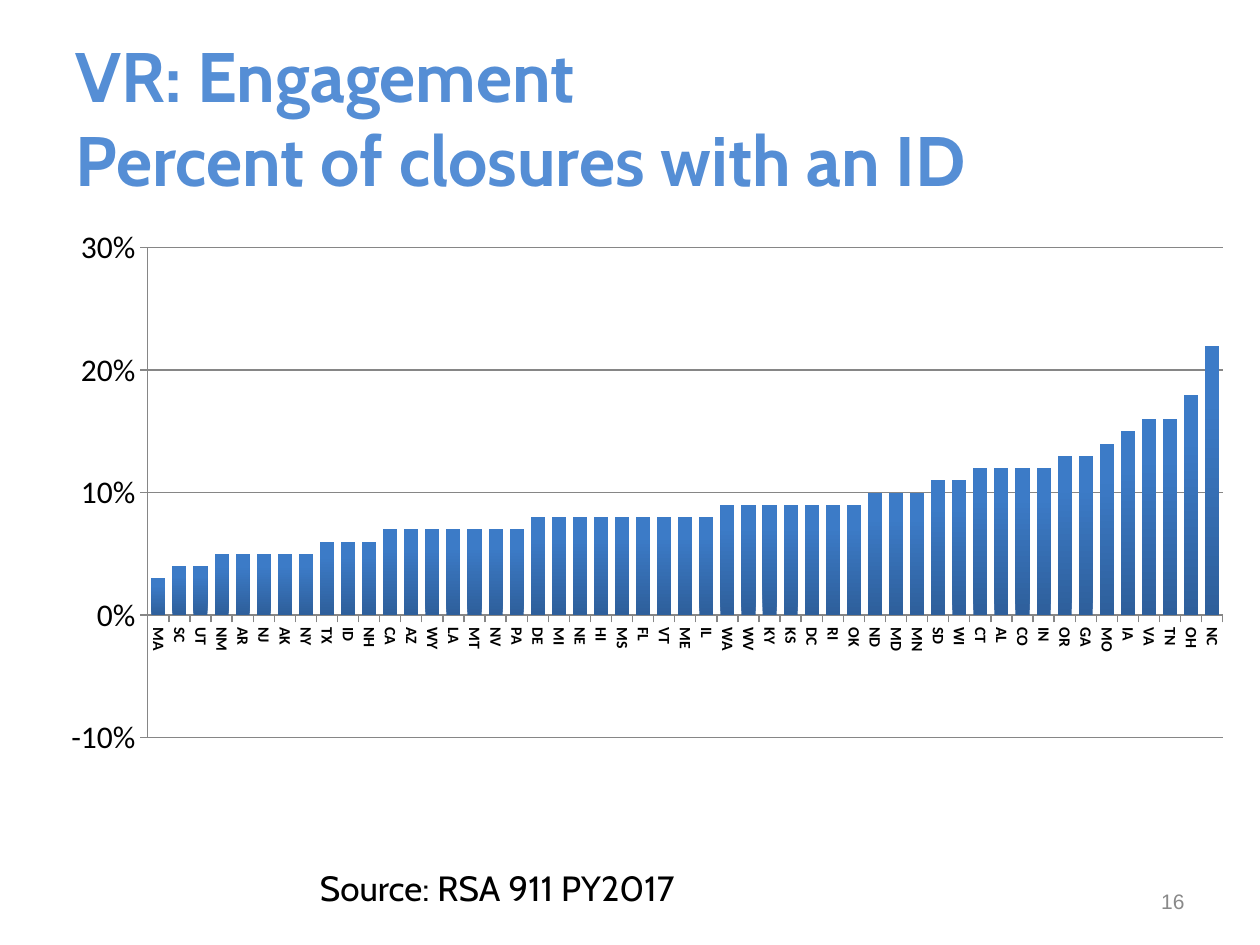
import pptx
import pptx.chart.data
import pptx.dml.color
import pptx.enum.chart
import pptx.enum.text
import pptx.oxml
import pptx.oxml.ns
import pptx.util

Inches = pptx.util.Inches
Pt = pptx.util.Pt
RGBColor = pptx.dml.color.RGBColor
ALIGN = pptx.enum.text.PP_ALIGN
ANCHOR = pptx.enum.text.MSO_ANCHOR

BLACK = RGBColor(0x00, 0x00, 0x00)
GRAY = RGBColor(0x89, 0x89, 0x89)
LINE_GRAY = RGBColor(0x86, 0x86, 0x86)
TITLE_BLUE = RGBColor(0x55, 0x8E, 0xD5)
BAR_DARK = RGBColor(0x2E, 0x5F, 0x9B)
BAR_LIGHT = RGBColor(0x3C, 0x7B, 0xC7)

STATES = (
    "MA SC UT NM AR NJ AK NY TX ID NH CA AZ WY LA MT NV PA DE MI NE HI MS FL VT ME "
    "IL WA WV KY KS DC RI OK ND MD MN SD WI CT AL CO IN OR GA MO IA VA TN OH NC"
).split()
SHARES = [
    0.03, 0.04, 0.04, 0.05, 0.05, 0.05, 0.05, 0.05, 0.06, 0.06, 0.06,
    0.07, 0.07, 0.07, 0.07, 0.07, 0.07, 0.07, 0.08, 0.08, 0.08, 0.08,
    0.08, 0.08, 0.08, 0.08, 0.08, 0.09, 0.09, 0.09, 0.09, 0.09, 0.09,
    0.09, 0.1, 0.1, 0.1, 0.11, 0.11, 0.12, 0.12, 0.12, 0.12, 0.13,
    0.13, 0.14, 0.15, 0.16, 0.16, 0.18, 0.22,
]


class Deck:
    heading_font = "Cabin"
    chart_font = "Calibri"

    def __init__(self):
        self.prs = pptx.Presentation()
        self.prs.slide_width = Inches(10)
        self.prs.slide_height = Inches(7.5)
        self.s = self.prs.slides.add_slide(self.prs.slide_layouts[5])

    def style(self, font, name, size, color, bold=False):
        font.name = name
        font.size = Pt(size)
        font.bold = bold
        font.color.rgb = color

    def title(self, text, x, y, w, h):
        sp = self.s.shapes.title
        sp.left, sp.top, sp.width, sp.height = map(Inches, (x, y, w, h))
        tf = sp.text_frame
        tf.text = text
        tf.word_wrap = True
        tf.auto_size = pptx.enum.text.MSO_AUTO_SIZE.NONE
        tf.vertical_anchor = ANCHOR.MIDDLE
        p = tf.paragraphs[0]
        p.alignment = ALIGN.LEFT
        self.style(p.font, self.heading_font, 40, TITLE_BLUE, True)

    def text(self, text, x, y, w, h, name, size, color, align=ALIGN.LEFT,
             anchor=ANCHOR.TOP, spacing=None):
        tf = self.s.shapes.add_textbox(*map(Inches, (x, y, w, h))).text_frame
        tf.word_wrap = True
        tf.vertical_anchor = anchor
        p = tf.paragraphs[0]
        p.text = text
        p.alignment = align
        p.line_spacing = spacing
        self.style(p.font, name, size, color)

    def column_chart(self, cats, vals, x, y, w, h, plot_box):
        data = pptx.chart.data.CategoryChartData(number_format="0%")
        data.categories = cats
        data.add_series("Series 1", vals)
        kind = pptx.enum.chart.XL_CHART_TYPE.COLUMN_STACKED
        chart = self.s.shapes.add_chart(kind, *map(Inches, (x, y, w, h)), data).chart
        chart.has_legend = False
        chart.has_title = False
        self.style(chart.font, self.chart_font, 18, BLACK)

        plot = chart.plots[0]
        plot.gap_width = 50
        plot.overlap = 100
        plot.vary_by_categories = False
        fill = plot.series[0].format.fill
        fill.gradient()
        fill.gradient_angle = 90
        for stop, color, position in zip(fill.gradient_stops, (BAR_DARK, BAR_LIGHT), (0, 0.8)):
            stop.color.rgb = color
            stop.position = position

        value, category = chart.value_axis, chart.category_axis
        value.minimum_scale, value.maximum_scale, value.major_unit = -0.1, 0.3, 0.1
        value.has_major_gridlines = True
        value.tick_labels.number_format = "0%"
        value.tick_labels.number_format_is_linked = False
        self.style(value.tick_labels.font, self.chart_font, 18, BLACK)
        self.style(category.tick_labels.font, self.chart_font, 9, BLACK, True)
        body = category._element.txPr.find(pptx.oxml.ns.qn("a:bodyPr"))
        body.set("rot", "5400000")
        body.set("vert", "horz")
        for axis in (value, category):
            axis.major_tick_mark = pptx.enum.chart.XL_TICK_MARK.OUTSIDE
        for part in (value, category, value.major_gridlines):
            part.format.line.color.rgb = LINE_GRAY
            part.format.line.width = Pt(0.75)
        self.place_plot(chart, plot_box)

    def place_plot(self, chart, box):
        area = chart._chartSpace.chart.plotArea
        for old in area.findall(pptx.oxml.ns.qn("c:layout")):
            area.remove(old)
        modes = '<c:layoutTarget val="inner"/><c:xMode val="edge"/><c:yMode val="edge"/>'
        sizes = "".join(f'<c:{tag} val="{v}"/>' for tag, v in zip("xywh", box))
        area.insert(0, pptx.oxml.parse_xml(
            f'<c:layout {pptx.oxml.ns.nsdecls("c")}><c:manualLayout>'
            f"{modes}{sizes}</c:manualLayout></c:layout>"))


def main():
    deck = Deck()
    deck.title("VR: Engagement \vPercent of closures with an ID", 0.5, 0.3, 9.17, 1.25)
    deck.column_chart(STATES, SHARES, 0.32, 1.77, 9.48, 4.92, (0.09, 0.04, 0.9, 0.79))
    deck.text("16", 7.17, 6.95, 2.33, 0.4, "Arial", 12, GRAY, ALIGN.RIGHT, ANCHOR.MIDDLE)
    deck.text("Source: RSA 911 PY2017", 2.44, 6.9, 3.5, 0.37, deck.heading_font, 20, BLACK,
              spacing=Pt(18.6))
    deck.prs.save("out.pptx")


if __name__ == "__main__":
    main()
